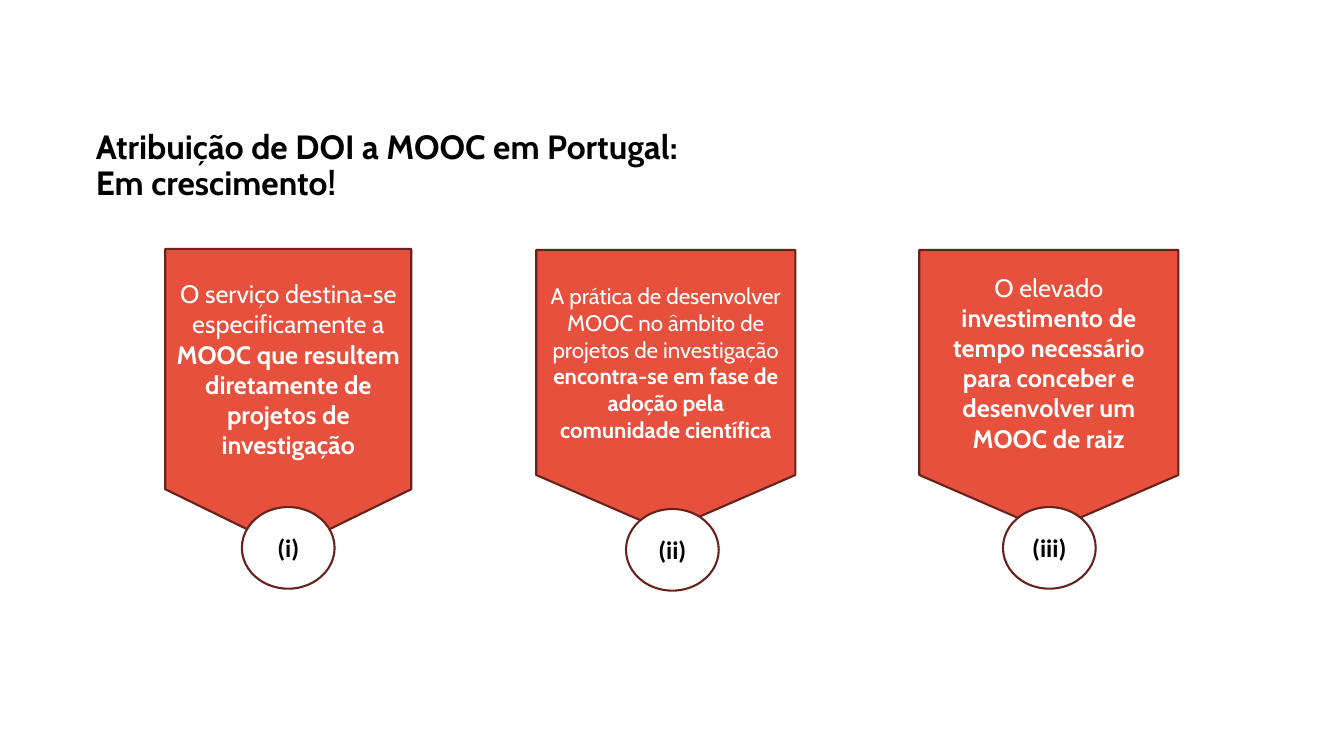
"""Build the slide on DOI assignment to MOOCs in Portugal."""
from dataclasses import dataclass

from pptx import Presentation
from pptx.dml.color import RGBColor
from pptx.enum.shapes import MSO_SHAPE
from pptx.enum.text import MSO_ANCHOR, MSO_AUTO_SIZE, PP_ALIGN
from pptx.shapes.autoshape import Shape
from pptx.slide import Slide
from pptx.util import Inches, Pt

WIDTH, HEIGHT = Inches(13.33), Inches(7.5)


@dataclass(frozen=True)
class Theme:
    """Colours, fonts and type sizes of the slide."""

    red: RGBColor = RGBColor(0xE6, 0x50, 0x3D)
    outline: RGBColor = RGBColor(0x65, 0x23, 0x1B)
    white: RGBColor = RGBColor(0xFF, 0xFF, 0xFF)
    black: RGBColor = RGBColor(0, 0, 0)
    body_font: str = "Cabin"
    label_font: str = "Calibri"
    title_size: int = 24
    body_size: int = 18
    small_size: int = 16
    line_width: float = 1.5


@dataclass(frozen=True)
class Area:
    """A rectangle in percent of the slide's width and height."""

    left: float
    top: float
    width: float
    height: float

    def lengths(self) -> tuple[int, int, int, int]:
        """Return left, top, width and height as slide lengths."""
        return (
            round(WIDTH * self.left / 100),
            round(HEIGHT * self.top / 100),
            round(WIDTH * self.width / 100),
            round(HEIGHT * self.height / 100),
        )


@dataclass(frozen=True)
class Span:
    """A piece of text with one format."""

    text: str
    size: int
    font: str
    color: RGBColor
    bold: bool = False


@dataclass(frozen=True)
class Badge:
    """A pennant with an argument and a numbered circle at its tip."""

    pennant: Area
    circle: Area
    number: str
    lead: str
    emphasis: str
    size: int


THEME = Theme()
TITLE = "Atribuição de DOI a MOOC em Portugal:\nEm crescimento!"
TITLE_AREA = Area(6.38, 15.73, 77.1, 11.73)
CIRCLE_SIZE = (6.9, 10.8)
BADGES = (
    Badge(
        Area(12.3, 32.93, 18.3, 39.73),
        Area(18, 67.07, *CIRCLE_SIZE),
        "(i)",
        "O serviço destina-se especificamente a ",
        "MOOC que resultem diretamente de projetos de investigação",
        THEME.body_size,
    ),
    Badge(
        Area(39.9, 33.07, 19.28, 37.2),
        Area(46.58, 67.33, *CIRCLE_SIZE),
        "(ii)",
        "A prática de desenvolver MOOC no âmbito de projetos de investigação ",
        "encontra-se em fase de adoção pela comunidade científica",
        THEME.small_size,
    ),
    Badge(
        Area(68.4, 33.07, 19.28, 37.2),
        Area(74.63, 67.07, *CIRCLE_SIZE),
        "(iii)",
        "O elevado ",
        "investimento de tempo necessário para conceber e desenvolver um MOOC de raiz",
        THEME.body_size,
    ),
)


def format_font(font, size: int, name: str, color: RGBColor, bold: bool) -> None:
    """Set size, typeface, colour and weight of a font."""
    font.size = Pt(size)
    font.name = name
    font.color.rgb = color
    font.bold = bold


def add_title(page: Slide) -> None:
    """Fill, move and format the title placeholder."""
    title = page.shapes.title
    title.left, title.top, title.width, title.height = TITLE_AREA.lengths()
    frame = title.text_frame
    frame.text = TITLE
    frame.word_wrap = True
    frame.auto_size = MSO_AUTO_SIZE.NONE
    frame.vertical_anchor = MSO_ANCHOR.BOTTOM
    for para in frame.paragraphs:
        para.alignment = PP_ALIGN.LEFT
        para.line_spacing = 0.9
        para.space_before = Pt(0)
        for run in para.runs:
            format_font(run.font, THEME.title_size, THEME.body_font, THEME.black, True)


def add_figure(
    page: Slide, kind: MSO_SHAPE, area: Area, fill: RGBColor, spans: list[Span]
) -> Shape:
    """Draw an outlined shape with centred text."""
    shape = page.shapes.add_shape(kind, *area.lengths())
    shape.shadow.inherit = False
    shape.fill.solid()
    shape.fill.fore_color.rgb = fill
    shape.line.color.rgb = THEME.outline
    shape.line.width = Pt(THEME.line_width)
    frame = shape.text_frame
    frame.word_wrap = True
    frame.vertical_anchor = MSO_ANCHOR.MIDDLE
    para = frame.paragraphs[0]
    para.alignment = PP_ALIGN.CENTER
    for span in spans:
        run = para.add_run()
        run.text = span.text
        format_font(run.font, span.size, span.font, span.color, span.bold)
    return shape


def add_pennant(page: Slide, badge: Badge) -> None:
    """Draw the pennant of a badge."""
    style = (badge.size, THEME.body_font, THEME.white)
    spans = [Span(badge.lead, *style), Span(badge.emphasis, *style, bold=True)]
    add_figure(
        page, MSO_SHAPE.FLOWCHART_OFFPAGE_CONNECTOR, badge.pennant, THEME.red, spans
    )


def add_circle(page: Slide, badge: Badge) -> None:
    """Draw the numbered circle of a badge."""
    label = Span(badge.number, THEME.body_size, THEME.label_font, THEME.black, True)
    add_figure(page, MSO_SHAPE.FLOWCHART_CONNECTOR, badge.circle, THEME.white, [label])


def main() -> None:
    """Build and save the deck."""
    deck = Presentation()
    deck.slide_width, deck.slide_height = WIDTH, HEIGHT
    page = deck.slides.add_slide(deck.slide_layouts.get_by_name("Title Only"))
    add_title(page)
    for badge in BADGES:
        add_pennant(page, badge)
    for badge in BADGES:
        add_circle(page, badge)
    deck.save("out.pptx")


if __name__ == "__main__":
    main()
